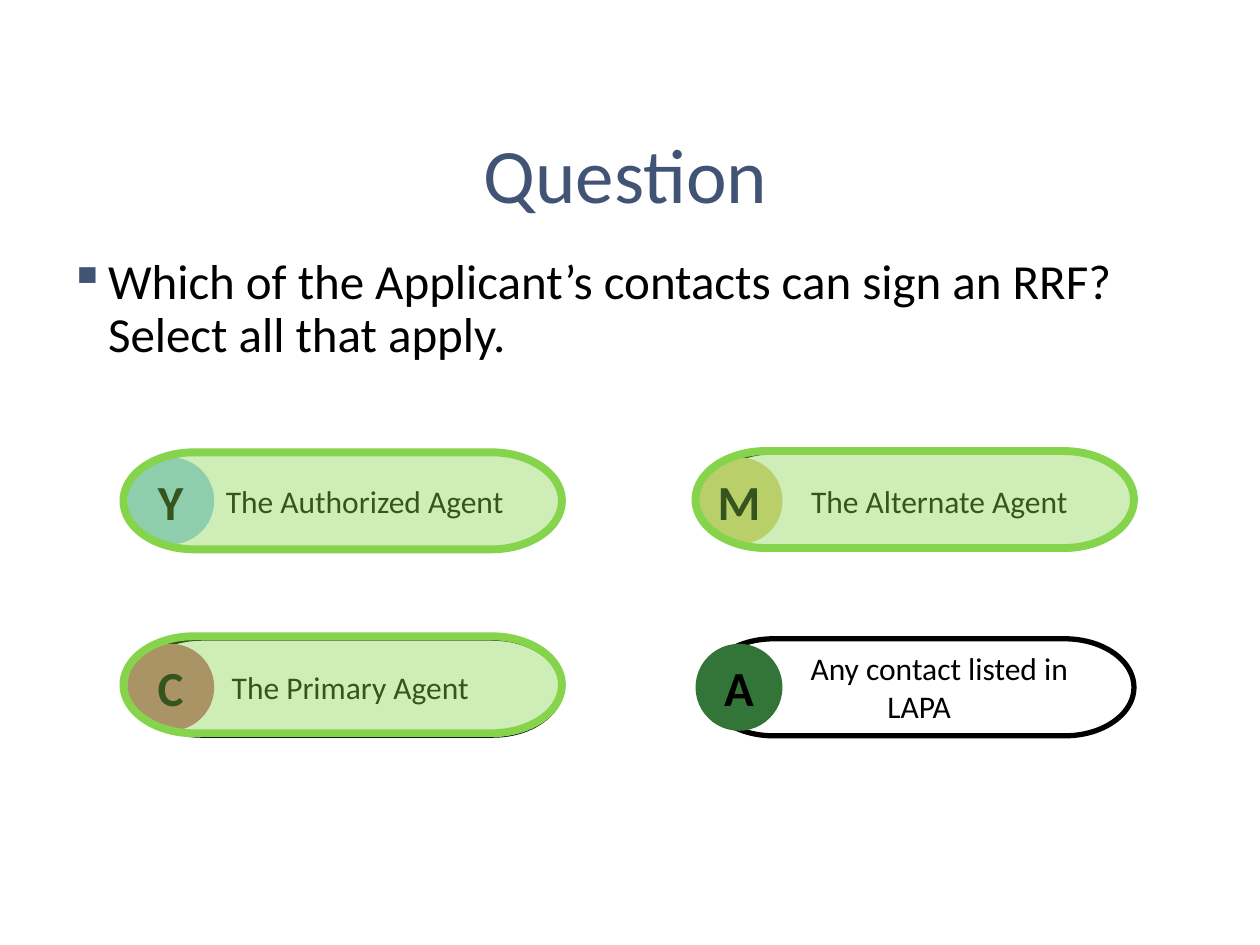
from dataclasses import dataclass
from lxml.etree import SubElement as Sub
from pptx import Presentation as Deck
from pptx.dml.color import RGBColor as Rgb
from pptx.enum.shapes import MSO_SHAPE as Kind
from pptx.enum.text import MSO_ANCHOR as Anchor, PP_ALIGN as Align
from pptx.oxml.ns import qn
from pptx.util import Emu, Inches, Pt

TITLE = "Question"
ASK = "Which of the Applicant’s contacts can sign an RRF? Select all that apply."
CHOICES = [
    dict(key="Y", label="The Authorized Agent", hue="94CBEC", col=0, row=0, lead=2.8, edge=2.25, glow=0),
    dict(key="C", label="The Primary Agent", hue="C26A77", col=0, row=1, lead=0.5, edge=2.25, glow=-0.2),
    dict(key="M", label="The Alternate Agent", hue="DCCD7D", col=1, row=0, lead=3.2, edge=2.25, glow=-0.1),
    dict(key="A", label="Any contact listed in LAPA", hue="337538", col=1, row=1, lead=3.2, edge=3, glow=None),
]


@dataclass
class Theme:
    font: str = "Calibri"
    ink: str = "000000"
    navy: str = "425475"
    pill: str = "FFFFFF"
    glow: str = "86D44C"
    head: int = 44
    body: int = 28
    label: int = 18
    ring: float = 4.5
    alpha: int = 40000


look = Theme()
COLS, ROWS = 100, 75
PILLS, DOTS, TIERS = (10.5, 55.9), (10.1, 55.2), (35.9, 50.7)
WIDE, TALL, DOT, EXTRA = 34.1, 7.7, 6.9, 0.7

deck = Deck()
deck.slide_width, deck.slide_height = Inches(10), Inches(7.5)
slide = deck.slides.add_slide(deck.slide_layouts[6])


def place(x, y, w, h):
    across, down = deck.slide_width / COLS, deck.slide_height / ROWS
    return [Emu(round(n)) for n in (x * across, y * down, w * across, h * down)]


def write(para, text, size, color, bold=False):
    run = para.add_run()
    run.text = text
    font = run.font
    font.name, font.size, font.bold = look.font, Pt(size), bold
    font.color.rgb = Rgb.from_string(color)


def box(*area):
    frame = slide.shapes.add_textbox(*place(*area)).text_frame
    frame.word_wrap = True
    para = frame.paragraphs[0]
    para.line_spacing = 0.9
    return frame, para


def draw(kind, area, fill, edge=None, width=0):
    shape = slide.shapes.add_shape(kind, *place(*area))
    shape.shadow.inherit = False
    shape.fill.solid()
    shape.fill.fore_color.rgb = Rgb.from_string(fill)
    if edge:
        shape.line.color.rgb = Rgb.from_string(edge)
        shape.line.width = Pt(width)
    else:
        shape.line.fill.background()
    return shape


def center(shape):
    frame = shape.text_frame
    frame.vertical_anchor = Anchor.MIDDLE
    para = frame.paragraphs[0]
    para.alignment = Align.CENTER
    return para


def bullet(para, sign, color):
    props = para._p.get_or_add_pPr()
    props.set("marL", str(Inches(0.31)))
    props.set("indent", str(-Inches(0.31)))
    tint = Sub(props, qn("a:buClr"))
    Sub(tint, qn("a:srgbClr"), val=color)
    Sub(props, qn("a:buChar"), char=sign)


def choice(item):
    col, row = item["col"], item["row"]
    pill = draw(Kind.FLOWCHART_TERMINATOR, (PILLS[col], TIERS[row], WIDE, TALL),
                look.pill, look.ink, item["edge"])
    para = center(pill)
    para._p.get_or_add_pPr().set("indent", str(place(item["lead"], 0, 0, 0)[0]))
    write(para, item["label"], look.label, look.ink)
    top = TIERS[row] + (TALL - DOT) / 2
    dot = draw(Kind.OVAL, (DOTS[col], top, DOT, DOT), item["hue"])
    dot.text_frame.margin_left = dot.text_frame.margin_right = 0
    write(center(dot), item["key"], look.body, look.ink, True)


def mark(item):
    x, y = PILLS[item["col"]] - EXTRA, TIERS[item["row"]] + item["glow"]
    ring = draw(Kind.FLOWCHART_TERMINATOR, (x, y, WIDE + EXTRA, TALL),
                look.glow, look.glow, look.ring)
    tint = ring._element.spPr.find(qn("a:solidFill"))[0]
    Sub(tint, qn("a:alpha"), val=str(look.alpha))


frame, para = box(3.9, 10.6, 91.5, 7.2)
frame.vertical_anchor = Anchor.MIDDLE
para.alignment = Align.CENTER
write(para, TITLE, look.head, look.navy)

frame, para = box(4.5, 19.9, 90.6, 52.2)
bullet(para, "▪", look.navy)
write(para, ASK, look.body, look.ink)

for item in CHOICES:
    choice(item)
for item in CHOICES:
    if item["glow"] is not None:
        mark(item)

deck.save("out.pptx")
